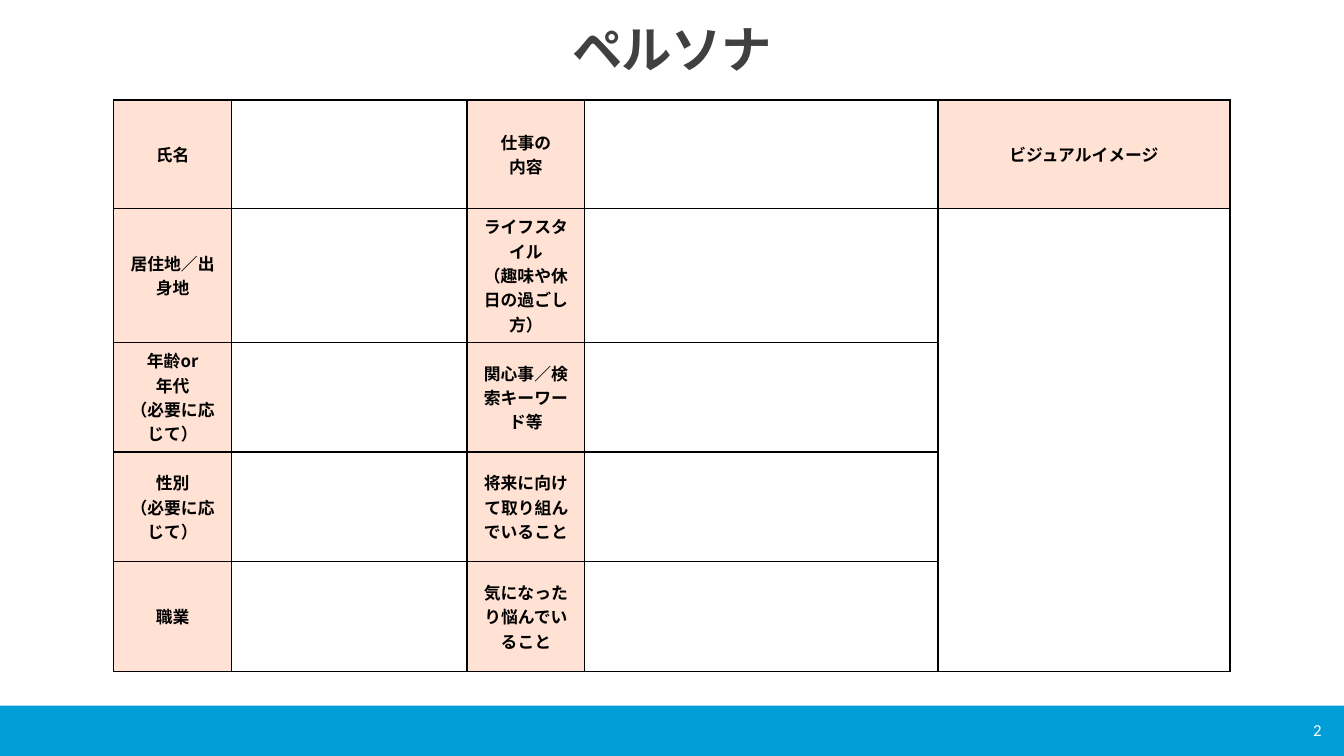
"""Build a persona worksheet slide with a labelled table and a blue footer bar."""
from pptx import Presentation
from pptx.dml.color import RGBColor
from pptx.enum import shapes, text
from pptx.oxml.ns import qn
from pptx.util import Pt
from lxml import etree

JAPANESE_FONT = "Noto Sans CJK JP"
BLUE = RGBColor(0x00, 0x9D, 0xD9)
PEACH = RGBColor(0xFF, 0xE2, 0xD4)
WHITE = RGBColor(0xFF, 0xFF, 0xFF)
BLACK = RGBColor(0x00, 0x00, 0x00)
GRAY = RGBColor(0x40, 0x40, 0x40)

COLUMN_WIDTHS = [84.2, 168.2, 84.2, 252.2, 208.6]
ROW_HEIGHTS = [77.4, 95.8, 78.4, 78.4, 78.4]
LABELS = {
    0: [["氏名"], ["居住地／出身地"], ["年齢or", "年代", "（必要に応じて）"],
        ["性別", "（必要に応じて）"], ["職業"]],
    2: [["仕事の", "内容"], ["ライフスタイル", "（趣味や休日の過ごし方）"],
        ["関心事／検索キーワード等"], ["将来に向けて取り組んでいること"],
        ["気になったり悩んでいること"]],
    4: [["ビジュアルイメージ"]],
}


def add_span(para, words, size, color, font=JAPANESE_FONT, bold=True):
    span = para.add_run()
    span.text = words
    span.font.size = Pt(size)
    span.font.bold = bold
    span.font.color.rgb = color
    span.font.name = font
    etree.SubElement(span.font._element, qn("a:ea"), typeface=font)
    return span


def add_border(cell, side, width):
    line = etree.SubElement(cell._tc.get_or_add_tcPr(), qn(f"a:{side}"), w=str(Pt(width)))
    fill = etree.SubElement(line, qn("a:solidFill"))
    etree.SubElement(fill, qn("a:srgbClr"), val=str(BLACK))


deck = Presentation()
deck.slide_width, deck.slide_height = Pt(960), Pt(540)
page = deck.slides.add_slide(deck.slide_layouts[5])

footer = page.shapes.add_shape(shapes.MSO_SHAPE.RECTANGLE, Pt(0), Pt(504), Pt(960), Pt(36))
footer.shadow.inherit = False
footer.fill.solid()
footer.fill.fore_color.rgb = BLUE
footer.line.fill.background()

title = page.shapes.title
title.left, title.top, title.width, title.height = Pt(47.5), Pt(6.5), Pt(865), Pt(62.6)
title.text_frame.vertical_anchor = text.MSO_ANCHOR.MIDDLE
para = title.text_frame.paragraphs[0]
para.alignment = text.PP_ALIGN.CENTER
para.line_spacing = 0.85
span = add_span(para, "ペルソナ", 36, GRAY)
span.font._element.set("spc", "-50")

number_box = page.shapes.add_textbox(Pt(848.2), Pt(507), Pt(103), Pt(28.8))
number_box.text_frame.word_wrap = True
number_box.text_frame.vertical_anchor = text.MSO_ANCHOR.MIDDLE
para = number_box.text_frame.paragraphs[0]
para.alignment = text.PP_ALIGN.RIGHT
add_span(para, "2", 12, WHITE, "Calibri", False)

frame = page.shapes.add_table(len(ROW_HEIGHTS), len(COLUMN_WIDTHS), Pt(81.2), Pt(71.3),
                              Pt(sum(COLUMN_WIDTHS)), Pt(sum(ROW_HEIGHTS)))
persona = frame.table
persona.first_row = persona.horz_banding = False
for column, width in zip(persona.columns, COLUMN_WIDTHS):
    column.width = Pt(width)
for row, height in zip(persona.rows, ROW_HEIGHTS):
    row.height = Pt(height)
persona.cell(1, 4).merge(persona.cell(4, 4))

last_row = len(ROW_HEIGHTS) - 1
for row in range(len(ROW_HEIGHTS)):
    for column in range(len(COLUMN_WIDTHS)):
        cell = persona.cell(row, column)
        add_border(cell, "lnL", 1)
        add_border(cell, "lnR", 1)
        add_border(cell, "lnT", 1.5 if row == 0 else 1)
        add_border(cell, "lnB", 1.5 if row == last_row else 1)
        labels = LABELS.get(column, [])
        lines = labels[row] if row < len(labels) else []
        cell.fill.solid()
        cell.fill.fore_color.rgb = PEACH if lines else WHITE
        cell.vertical_anchor = text.MSO_ANCHOR.MIDDLE
        for index, words in enumerate(lines):
            para = cell.text_frame.add_paragraph() if index else cell.text_frame.paragraphs[0]
            para.alignment = text.PP_ALIGN.CENTER
            add_span(para, words, 12, BLACK)

deck.save("out.pptx")
